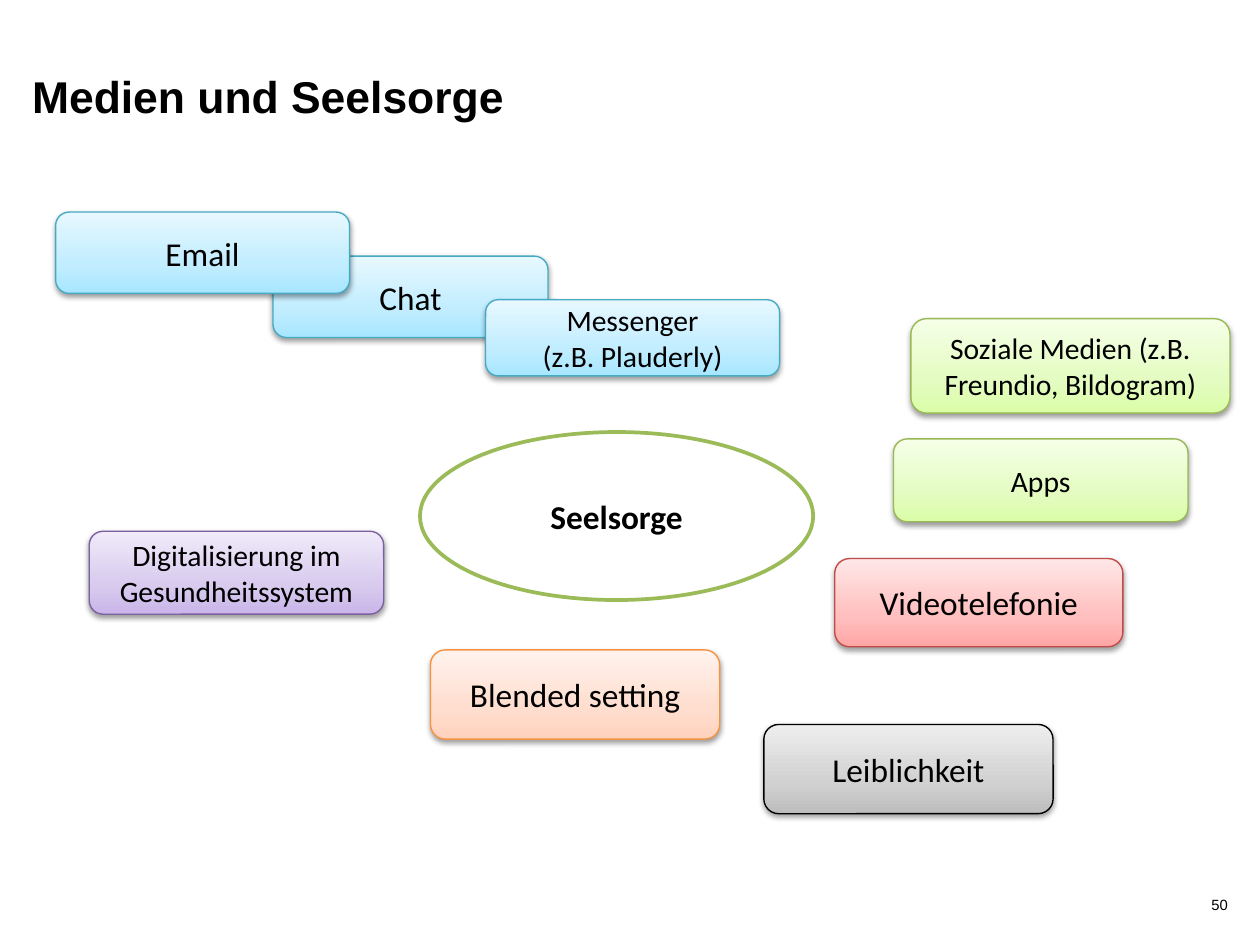
from copy import deepcopy

from pptx import Presentation
from pptx.dml.color import RGBColor
from pptx.enum.shapes import MSO_SHAPE
from pptx.enum.text import MSO_ANCHOR, PP_ALIGN
from pptx.oxml import parse_xml
from pptx.oxml.ns import nsdecls, qn
from pptx.util import Cm, Pt

ROUNDED = MSO_SHAPE.ROUNDED_RECTANGLE
OVAL = MSO_SHAPE.OVAL
TOP = MSO_ANCHOR.TOP
MIDDLE = MSO_ANCHOR.MIDDLE
BOTTOM = MSO_ANCHOR.BOTTOM
LEFT = PP_ALIGN.LEFT
CENTER = PP_ALIGN.CENTER
RIGHT = PP_ALIGN.RIGHT

BLACK = RGBColor(0x00, 0x00, 0x00)
WHITE = RGBColor(0xFF, 0xFF, 0xFF)
OVAL_GREEN = RGBColor(0x9B, 0xBB, 0x59)
RED = (RGBColor(0xBF, 0x4C, 0x48), RGBColor(0xFF, 0xA6, 0xA5),
       RGBColor(0xFF, 0xC0, 0xBF), RGBColor(0xFF, 0xE7, 0xE7))
BLUE = (RGBColor(0x46, 0xAA, 0xC5), RGBColor(0xA7, 0xE6, 0xFF),
        RGBColor(0xC1, 0xED, 0xFF), RGBColor(0xE7, 0xF8, 0xFF))
GREEN = (RGBColor(0x98, 0xB9, 0x55), RGBColor(0xDA, 0xFD, 0xA7),
         RGBColor(0xE4, 0xFC, 0xC2), RGBColor(0xF5, 0xFF, 0xE7))
ORANGE = (RGBColor(0xF6, 0x92, 0x40), RGBColor(0xFF, 0xD2, 0xBD),
          RGBColor(0xFF, 0xDE, 0xD0), RGBColor(0xFF, 0xF2, 0xED))
PURPLE = (RGBColor(0x7D, 0x60, 0xA0), RGBColor(0xC9, 0xB5, 0xE8),
          RGBColor(0xD8, 0xCB, 0xEE), RGBColor(0xF0, 0xEA, 0xF9))
GREY = (BLACK, RGBColor(0xBD, 0xBD, 0xBD),
        RGBColor(0xD1, 0xD1, 0xD1), RGBColor(0xEE, 0xEE, 0xEE))

STOP_POSITIONS = (0, 0.35, 1)
SHADOW = (
    f'<a:outerShdw {nsdecls("a")} blurRad="39370" dist="20320" dir="5400000" '
    'rotWithShape="0"><a:srgbClr val="000000"><a:alpha val="38000"/>'
    '</a:srgbClr></a:outerShdw>'
)

TOPICS = [
    ("Videotelefonie", 15.9, 10.64, 5.49, 1.68, 18, RED),
    ("Chat", 5.2, 4.88, 5.24, 1.55, 18, BLUE),
    ("Email", 1.06, 4.04, 5.6, 1.55, 18, BLUE),
    ("Messenger\v(z.B. Plauderly)", 9.25, 5.71, 5.6, 1.45, 16, BLUE),
    ("Soziale Medien (z.B. Freundio, Bildogram)", 17.35, 6.07, 6.08, 1.8, 16, GREEN),
    ("Apps", 17.02, 8.36, 5.61, 1.58, 16, GREEN),
    ("Blended setting", 8.2, 12.38, 5.51, 1.7, 18, ORANGE),
    ("Digitalisierung im Gesundheitssystem", 1.7, 10.12, 5.61, 1.58, 16, PURPLE),
    ("Leiblichkeit", 14.55, 13.8, 5.51, 1.7, 18, GREY),
]


def write_text(shape, text, font_name, size, alignment, anchor, bold=False):
    frame = shape.text_frame
    frame.text = text
    frame.word_wrap = True
    frame.vertical_anchor = anchor
    paragraph = frame.paragraphs[0]
    paragraph.alignment = alignment
    paragraph.font.name = font_name
    paragraph.font.size = Pt(size)
    paragraph.font.bold = bold
    paragraph.font.color.rgb = BLACK


def remove_margins(shape):
    frame = shape.text_frame
    frame.margin_left = frame.margin_right = 0
    frame.margin_top = frame.margin_bottom = 0


presentation = Presentation()
presentation.slide_width = Cm(24)
presentation.slide_height = Cm(18)
slide = presentation.slides.add_slide(presentation.slide_layouts[5])

title = slide.shapes.title
title.left, title.top, title.width, title.height = Cm(0.61), Cm(1.3), Cm(16.71), Cm(3)
write_text(title, "Medien und Seelsorge", "Arial", 24, LEFT, TOP, bold=True)
title.text_frame.paragraphs[0].line_spacing = Pt(29)
remove_margins(title)

page_number = slide.shapes.add_textbox(Cm(17.2), Cm(16.99), Cm(6.19), Cm(0.41))
write_text(page_number, "50", "Arial", 8, RIGHT, BOTTOM)
remove_margins(page_number)

for text, left, top, width, height, size, (outline, *shades) in TOPICS:
    box = slide.shapes.add_shape(ROUNDED, Cm(left), Cm(top), Cm(width), Cm(height))
    box.fill.gradient()
    box.fill.gradient_angle = 90
    stop_list = box.element.spPr.find(".//" + qn("a:gsLst"))
    stop_list.append(deepcopy(stop_list[-1]))
    for stop, position, shade in zip(box.fill.gradient_stops, STOP_POSITIONS, shades):
        stop.position = position
        stop.color.rgb = shade
    box.line.color.rgb = outline
    box.line.width = Pt(0.75)
    box.shadow.inherit = False
    box.element.spPr.find(qn("a:effectLst")).append(parse_xml(SHADOW))
    write_text(box, text, "Calibri", size, CENTER, MIDDLE)

center_oval = slide.shapes.add_shape(OVAL, Cm(8), Cm(8.23), Cm(7.49), Cm(3.2))
center_oval.fill.solid()
center_oval.fill.fore_color.rgb = WHITE
center_oval.line.color.rgb = OVAL_GREEN
center_oval.line.width = Pt(2)
center_oval.shadow.inherit = False
write_text(center_oval, "Seelsorge", "Calibri", 18, CENTER, MIDDLE, bold=True)

presentation.save("out.pptx")
